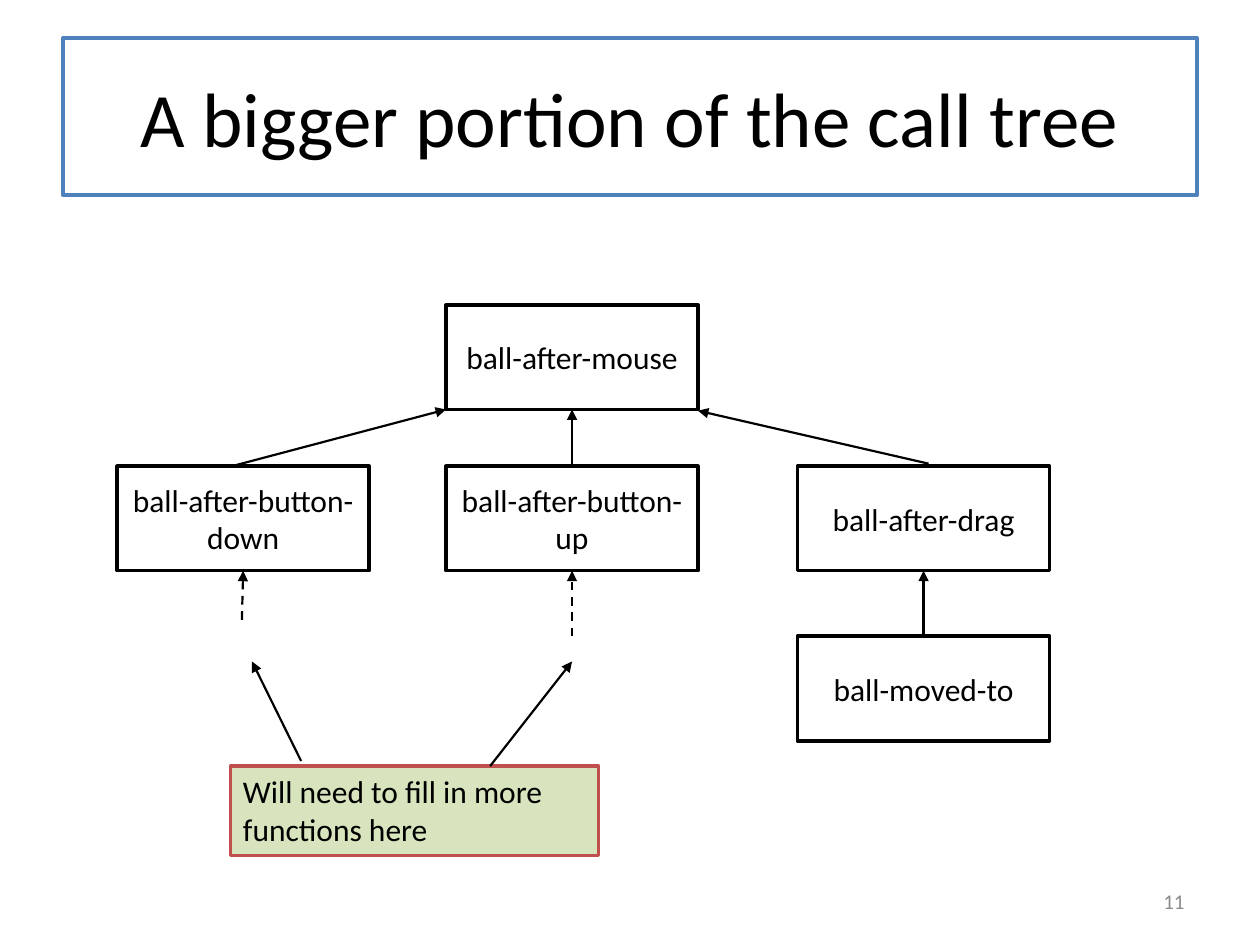
from pptx import Presentation
from pptx.dml.color import RGBColor as Rgb
from pptx.enum.dml import MSO_LINE as Dash
from pptx.enum.shapes import MSO_CONNECTOR as Conn, MSO_SHAPE as Kind
from pptx.enum.text import MSO_ANCHOR as Anchor, PP_ALIGN as Align
from pptx.oxml.ns import qn
from pptx.util import Inches, Pt
from lxml.etree import SubElement

BLACK = Rgb(0x00, 0x00, 0x00)
WHITE = Rgb(0xFF, 0xFF, 0xFF)
BLUE = Rgb(0x4F, 0x81, 0xBD)
RED = Rgb(0xC0, 0x50, 0x4D)
GREEN = Rgb(0xD7, 0xE4, 0xBD)
GREY = Rgb(0x8C, 0x8C, 0x8C)

WIDE, HIGH = 2, 0.83
LEFT, MID, RIGHT = 0.93, 3.54, 6.33
TOP, ROW, LOW = 2.42, 3.7, 5.05


def set_all(item, values):
    for name, value in values.items():
        setattr(item, name, value)


def write(shape, text, size, color, align, anchor):
    frame = shape.text_frame
    set_all(frame, {"word_wrap": True, "vertical_anchor": anchor})
    para = frame.paragraphs[0]
    para.alignment = align
    run = para.add_run()
    run.text = text
    set_all(run.font, {"name": "Calibri", "size": Pt(size)})
    run.font.color.rgb = color


def add_box(slide, place, text, size=18, fill=WHITE, edge=BLACK,
            align=Align.CENTER, anchor=Anchor.MIDDLE):
    box = slide.shapes.add_shape(Kind.RECTANGLE, *map(Inches, place))
    box.shadow.inherit = False
    box.fill.solid()
    box.fill.fore_color.rgb = fill
    box.line.color.rgb = edge
    box.line.width = Pt(2)
    write(box, text, size, BLACK, align, anchor)


def add_node(slide, left, top, text):
    add_box(slide, (left, top, WIDE, HIGH), text)


def add_arrow(slide, start, end, dash=None):
    arrow = slide.shapes.add_connector(
        Conn.STRAIGHT, *map(Inches, (*start, *end)))
    arrow.line.color.rgb = BLACK
    set_all(arrow.line, {"width": Pt(1.25), "dash_style": dash})
    SubElement(arrow.line._get_or_add_ln(), qn("a:tailEnd"), type="triangle")
    SubElement(arrow._element.spPr, qn("a:effectLst"))


def add_number(slide, text):
    box = slide.shapes.add_textbox(*map(Inches, (7.17, 6.95, 2.33, 0.4)))
    write(box, text, 12, GREY, Align.RIGHT, Anchor.MIDDLE)


def main():
    deck = Presentation()
    set_all(deck, {"slide_width": Inches(10), "slide_height": Inches(7.5)})
    slide = deck.slides.add_slide(deck.slide_layouts[6])

    add_box(slide, (0.5, 0.3, 9, 1.25), "A bigger portion of the call tree",
            size=44, edge=BLUE)
    add_number(slide, "11")

    for left, top, text in (
        (MID, TOP, "ball-after-mouse"),
        (LEFT, ROW, "ball-after-button-down"),
        (MID, ROW, "ball-after-button-up"),
        (RIGHT, ROW, "ball-after-drag"),
        (RIGHT, LOW, "ball-moved-to"),
    ):
        add_node(slide, left, top, text)
    add_box(slide, (1.83, 6.08, 2.92, 0.71),
            "Will need to fill in more functions here",
            fill=GREEN, edge=RED, align=Align.LEFT, anchor=Anchor.TOP)

    half = WIDE / 2
    base, foot = TOP + HIGH, ROW + HIGH
    for start, end in (
        ((1.84, ROW), (MID, base)),
        ((MID + half, ROW), (MID + half, base)),
        ((7.37, 3.68), (MID + WIDE, 3.26)),
        ((RIGHT + half, LOW), (RIGHT + half, foot)),
        ((2.39, 6.04), (2, 5.25)),
        ((3.89, 6.08), (MID + half, 5.25)),
    ):
        add_arrow(slide, start, end)
    add_arrow(slide, (1.92, 4.92), (LEFT + half, foot), Dash.DASH)
    add_arrow(slide, (MID + half, LOW), (MID + half, foot), Dash.DASH)

    deck.save("out.pptx")


if __name__ == "__main__":
    main()
